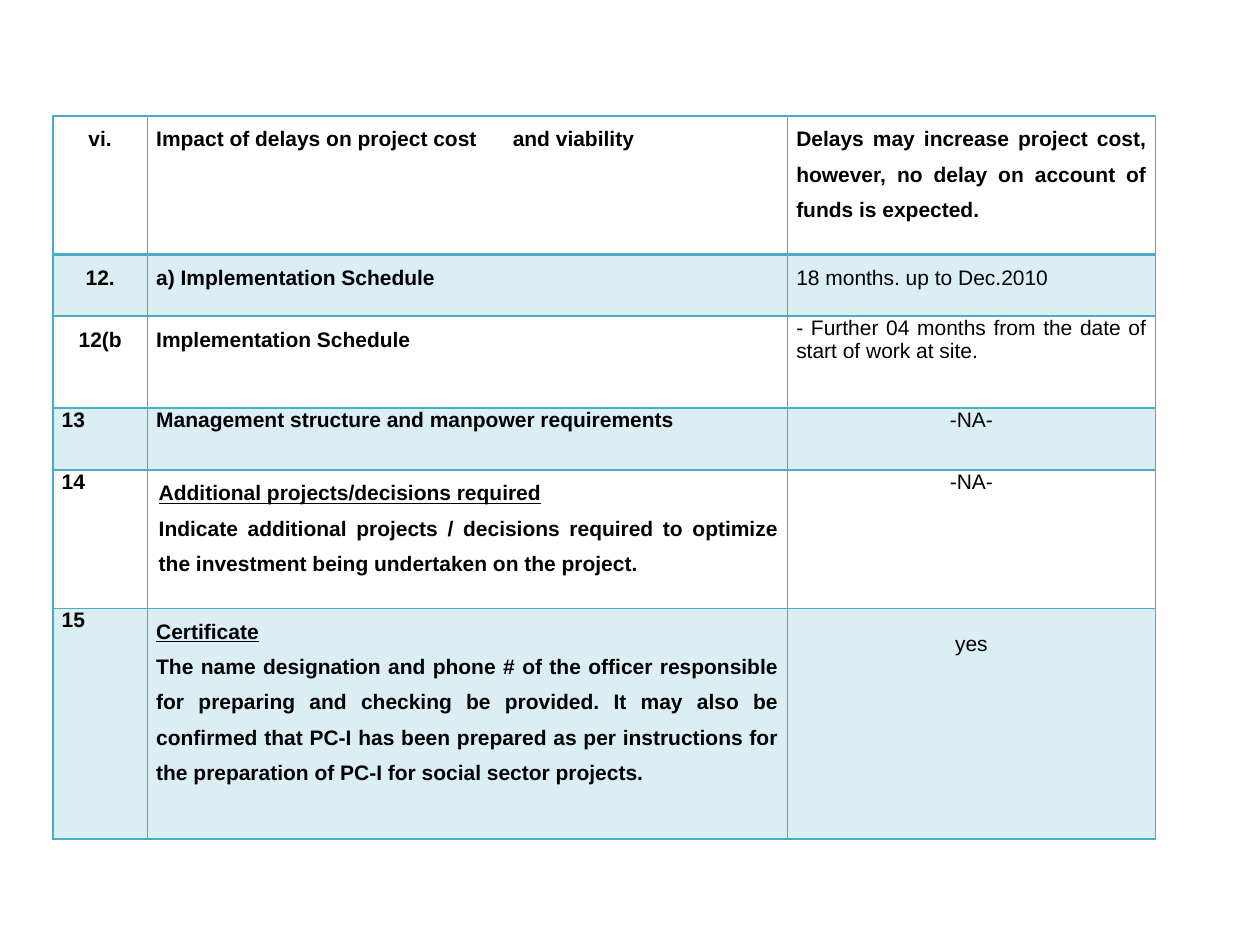
from lxml import etree
from pptx import Presentation
from pptx import util as u
from pptx.dml.color import RGBColor
from pptx.enum import text
from pptx.oxml import ns

TEAL = "4BACC6"
LEFT, CENTER, JUSTIFY = text.PP_ALIGN.LEFT, text.PP_ALIGN.CENTER, text.PP_ALIGN.JUSTIFY
COLUMNS = [0.75, 5.08, 2.92]
HEIGHTS = [1.1, 0.49, 0.73, 0.49, 1.1, 1.83]

# Each cell: paragraphs, alignment, line spacing, bold
ROWS = [
    [(["vi."], CENTER, 1.5, True),
     (["Impact of delays on project cost\tand viability"], JUSTIFY, 1.5, True),
     (["Delays may increase project cost, however, no delay on account of "
       "funds is expected."], JUSTIFY, 1.5, True)],
    [(["12."], CENTER, 1.5, True),
     (["a) Implementation Schedule"], JUSTIFY, 1.5, True),
     (["18 months. up to Dec.2010"], JUSTIFY, 1.5, False)],
    [(["12(b"], CENTER, 1.5, True),
     (["Implementation Schedule"], JUSTIFY, 1.5, True),
     (["- Further 04 months from the date of start of work at site."], JUSTIFY, 1, False)],
    [(["13"], LEFT, 1, True),
     (["Management structure and manpower requirements"], JUSTIFY, 1, True),
     (["-NA-"], CENTER, 1, False)],
    [(["14"], LEFT, 1, True),
     (["Additional projects/decisions required",
       "Indicate additional projects / decisions required to optimize the "
       "investment being undertaken on the project."], JUSTIFY, 1.5, True),
     (["-NA-"], CENTER, 1, False)],
    [(["15"], LEFT, 1, True),
     (["Certificate",
       "The name designation and phone # of the officer responsible for preparing "
       "and checking be provided. It may also be confirmed that PC-I has been "
       "prepared as per instructions for the preparation of PC-I for social "
       "sector projects."], JUSTIFY, 1.5, True),
     (["yes"], CENTER, 1, False)],
]


def add_color(parent, color, alpha=None):
    """Append a solid fill to an XML element, with opacity in percent."""
    fill = etree.SubElement(parent, ns.qn("a:solidFill"))
    tint = etree.SubElement(fill, ns.qn("a:srgbClr"), val=color)
    if alpha:
        etree.SubElement(tint, ns.qn("a:alpha"), val=str(alpha * 1000))


deck = Presentation()
deck.slide_width, deck.slide_height = u.Inches(10), u.Inches(7.5)
page = deck.slides.add_slide(deck.slide_layouts[6])

table = page.shapes.add_table(
    len(ROWS), len(COLUMNS), u.Inches(0.42), u.Inches(0.92),
    u.Inches(sum(COLUMNS)), u.Inches(sum(HEIGHTS))).table
table.first_row = table.horz_banding = False
for column, width in zip(table.columns, COLUMNS):
    column.width = u.Inches(width)
for row, height in zip(table.rows, HEIGHTS):
    row.height = u.Inches(height)

for r, cells in enumerate(ROWS):
    for c, (lines, align, spacing, bold) in enumerate(cells):
        cell = table.cell(r, c)
        cell.margin_left = cell.margin_right = u.Inches(0.07)
        cell.margin_top = cell.margin_bottom = 0
        cell.text_frame.text = "\n".join(lines)
        for i, para in enumerate(cell.text_frame.paragraphs):
            para.alignment, para.line_spacing = align, float(spacing)
            for span in para.runs:
                span.font.name, span.font.size = "Arial", u.Pt(12)
                span.font.bold = bold
                span.font.underline = len(lines) > 1 and i == 0
                span.font.color.rgb = RGBColor.from_string("000000")

        # Borders come before the fill in the cell properties
        props = cell._tc.get_or_add_tcPr()
        for side in "LRTB":
            heavy = (r == 0 and side == "B") or (r == 1 and side == "T")
            line = etree.SubElement(props, ns.qn(f"a:ln{side}"),
                                    w=str(u.Pt(2 if heavy else 1)))
            add_color(line, TEAL)
        if r % 2:
            add_color(props, TEAL, 20)
        else:
            cell.fill.background()

# Tab stop for the gap in the first row
para_props = table.cell(0, 1).text_frame.paragraphs[0]._p.get_or_add_pPr()
tabs = etree.SubElement(para_props, ns.qn("a:tabLst"))
etree.SubElement(tabs, ns.qn("a:tab"), pos=str(u.Inches(2.83)), algn="l")

# Indents of the additional projects cell
for para, (margin, indent) in zip(table.cell(4, 1).text_frame.paragraphs,
                                  [(0.25, -0.23), (0.02, 0)]):
    para_props = para._p.get_or_add_pPr()
    para_props.set("marL", str(u.Inches(margin)))
    para_props.set("indent", str(u.Inches(indent)))

# The certificate answer sits one line lower
table.cell(5, 2).margin_top = u.Inches(0.19)

deck.save("out.pptx")
